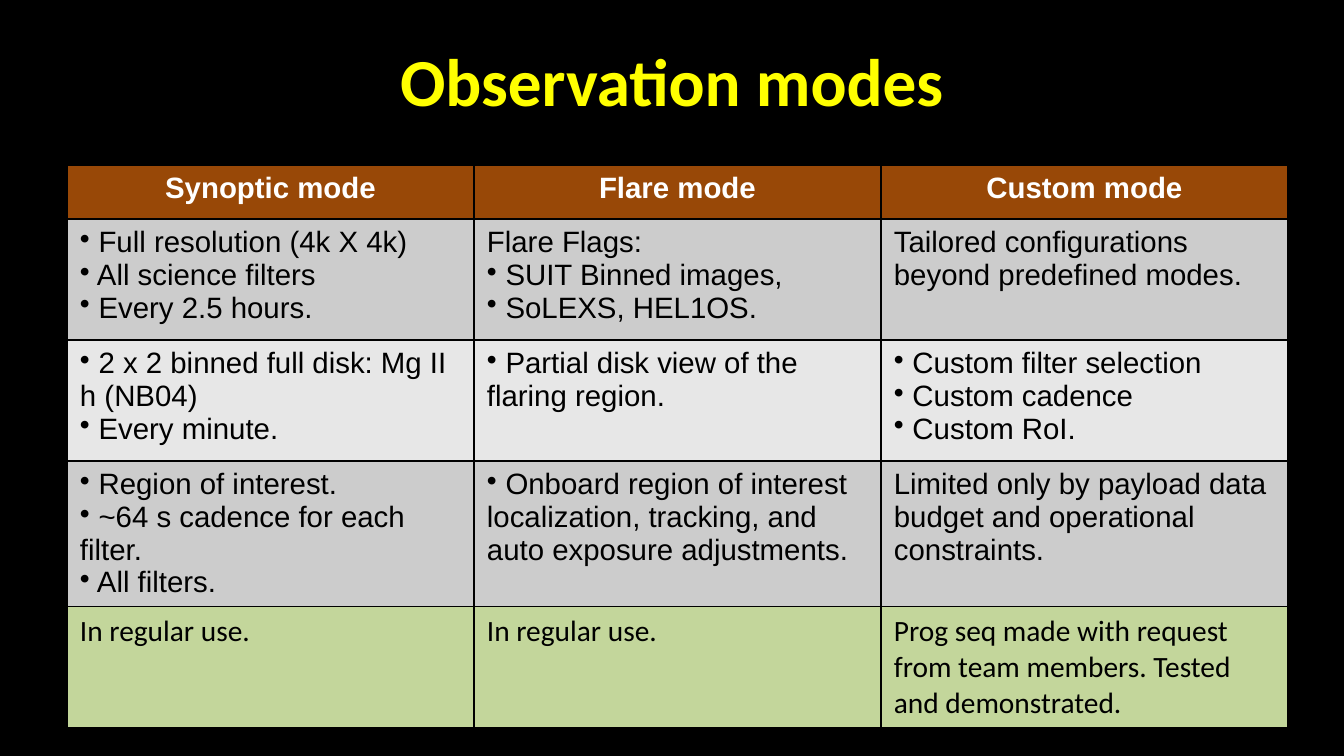
from dataclasses import dataclass

from lxml import etree
from pptx import Presentation
from pptx.dml.color import RGBColor
from pptx.enum.text import MSO_ANCHOR, PP_ALIGN
from pptx.oxml.ns import qn

CENTER, LEFT = PP_ALIGN.CENTER, PP_ALIGN.LEFT
MIDDLE, TOP = MSO_ANCHOR.MIDDLE, MSO_ANCHOR.TOP
PX = 914400 / 100.8
PT = 12700
BULLET = "•"


@dataclass(frozen=True)
class Theme:
    """Colours, fonts and type sizes of the slide."""
    background: str = "000000"
    title: str = "FFFF00"
    header_text: str = "FFFFFF"
    text: str = "000000"
    border: str = "000000"
    header: str = "984807"
    dark_row: str = "CCCCCC"
    light_row: str = "E7E7E7"
    status_row: str = "C3D69B"
    title_font: str = "Calibri"
    table_font: str = "Arial"
    title_size: int = 48
    table_size: int = 21


THEME = Theme()

MODES = ["Synoptic mode", "Flare mode", "Custom mode"]
FEATURES = [
    [["• Full resolution (4k X 4k)", "• All science filters", "• Every 2.5 hours."],
     ["Flare Flags:", "• SUIT Binned images,", "• SoLEXS, HEL1OS."],
     ["Tailored configurations beyond predefined modes."]],
    [["• 2 x 2 binned full disk: Mg II h (NB04)", "• Every minute."],
     ["• Partial disk view of the flaring region."],
     ["• Custom filter selection", "• Custom cadence", "• Custom RoI."]],
    [["• Region of interest.", "• ~64 s cadence for each filter.", "• All filters."],
     ["• Onboard region of interest localization, tracking, and auto exposure adjustments."],
     ["Limited only by payload data budget and operational constraints."]],
]
STATUS = [
    ["In regular use."],
    ["In regular use."],
    ["Prog seq made with request from team members. Tested and demonstrated."],
]
ROW_HEIGHTS = [54, 121, 121, 145, 121]


def px(length):
    """Turn a length in px into EMU."""
    return round(length * PX)


def rgb(colour):
    """Turn a hex string into a colour."""
    return RGBColor.from_string(colour)


def write(frame, lines, font=THEME.table_font, size=THEME.table_size,
          colour=THEME.text, bold=False, align=LEFT):
    """Fill a text frame with formatted lines, making real bullets of marked ones."""
    frame.word_wrap = True
    for number, line in enumerate(lines):
        paragraph = frame.add_paragraph() if number else frame.paragraphs[0]
        paragraph.alignment = align
        if line.startswith(BULLET):
            properties = paragraph._p.get_or_add_pPr()
            properties.set("marL", "0")
            properties.set("indent", "0")
            etree.SubElement(properties, qn("a:buChar"), char=BULLET)
        run = paragraph.add_run()
        run.text = line.removeprefix(BULLET)
        run.font.name = font
        run.font.size = size * PT
        run.font.bold = bold
        run.font.color.rgb = rgb(colour)


def style_cell(cell, fill):
    """Give a cell its margins, borders and fill."""
    cell.margin_left = cell.margin_right = px(13)
    cell.margin_top = cell.margin_bottom = px(7)
    cell.vertical_anchor = TOP
    properties = cell._tc.get_or_add_tcPr()
    for side in ("lnL", "lnR", "lnT", "lnB"):
        line = etree.SubElement(properties, qn(f"a:{side}"), w=str(PT))
        solid = etree.SubElement(line, qn("a:solidFill"))
        etree.SubElement(solid, qn("a:srgbClr"), val=THEME.border)
    cell.fill.solid()
    cell.fill.fore_color.rgb = rgb(fill)


def add_title(slide, left, top, width, height):
    """Place and format the slide title in the given box."""
    title = slide.shapes.title
    title.left, title.top = px(left), px(top)
    title.width, title.height = px(width), px(height)
    title.text_frame.vertical_anchor = MIDDLE
    write(title.text_frame, ["Observation modes"], font=THEME.title_font,
          size=THEME.title_size, colour=THEME.title, bold=True, align=CENTER)


def add_modes_table(slide, left, top, width):
    """Draw the comparison of the modes, with equal columns over the given width."""
    header_format = dict(colour=THEME.header_text, bold=True, align=CENTER)
    rows = [([[mode] for mode in MODES], THEME.header, header_format)]
    feature_fills = (THEME.dark_row, THEME.light_row, THEME.dark_row)
    rows += [(row, fill, {}) for row, fill in zip(FEATURES, feature_fills)]
    rows.append((STATUS, THEME.status_row, dict(font=THEME.title_font)))

    table = slide.shapes.add_table(
        len(rows), len(MODES), px(left), px(top), px(width), px(sum(ROW_HEIGHTS))
    ).table
    for column in table.columns:
        column.width = px(width / len(MODES))
    for row, height, (contents, fill, text_format) in zip(table.rows, ROW_HEIGHTS, rows):
        row.height = px(height)
        for cell, lines in zip(row.cells, contents):
            style_cell(cell, fill)
            write(cell.text_frame, lines, **text_format)


def main():
    """Build the slide and save it."""
    deck = Presentation()
    deck.slide_width, deck.slide_height = px(1344), px(756)
    slide = deck.slides.add_slide(deck.slide_layouts.get_by_name("Title Only"))
    slide.background.fill.solid()
    slide.background.fill.fore_color.rgb = rgb(THEME.background)
    add_modes_table(slide, 67, 165, 1221)
    add_title(slide, 67, 17, 1210, 126)
    deck.save("out.pptx")


if __name__ == "__main__":
    main()
